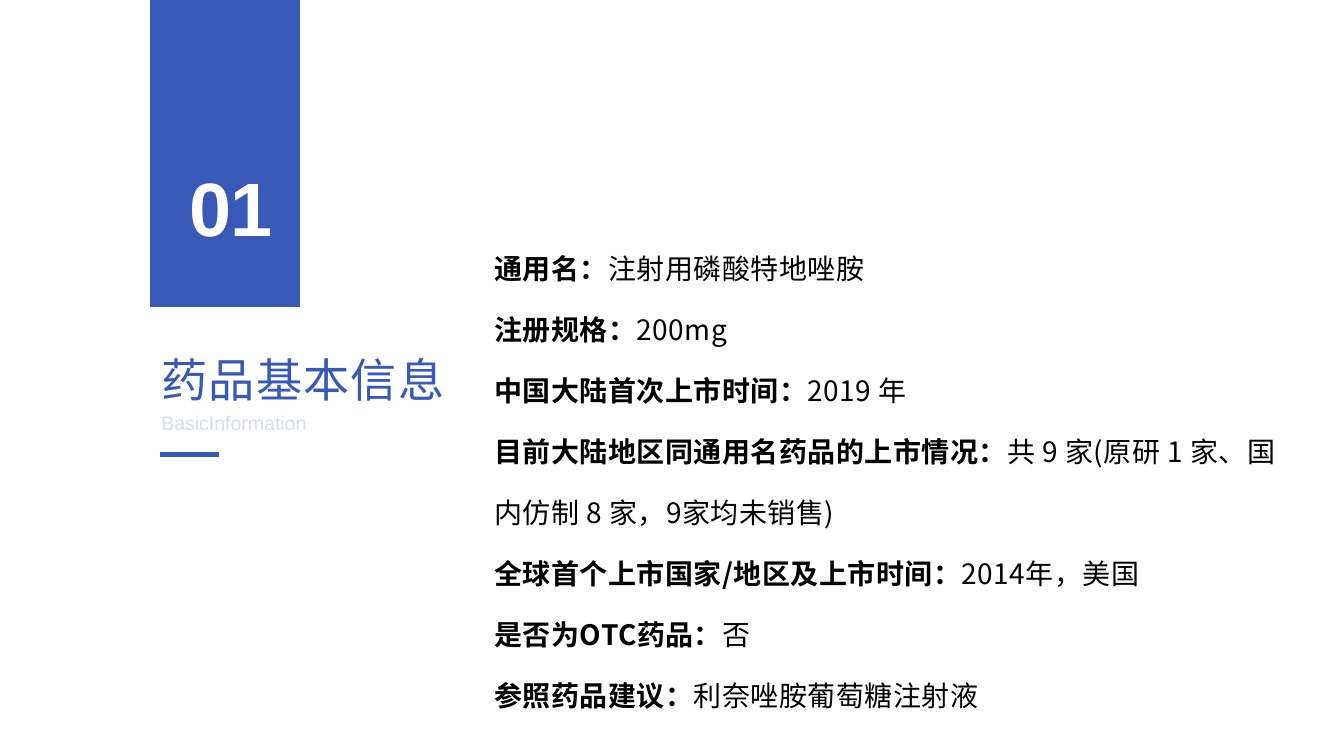
from lxml.etree import SubElement
from pptx import Presentation
from pptx.dml.color import RGBColor
from pptx.enum.shapes import MSO_CONNECTOR as Connector
from pptx.oxml.ns import qn
from pptx.util import Pt

NUMBER = "01"
TITLE = "药品基本信息"
SUBTITLE = "BasicInformation"
FACTS = [
    ("通用名：", "注射用磷酸特地唑胺"),
    ("注册规格：", "200mg"),
    ("中国大陆首次上市时间：", "2019 年"),
    ("目前大陆地区同通用名药品的上市情况：", "共 9 家(原研 1 家、国内仿制 8 家，9家均未销售)"),
    ("全球首个上市国家/地区及上市时间：", "2014年，美国"),
    ("是否为OTC药品：", "否"),
    ("参照药品建议：", "利奈唑胺葡萄糖注射液"),
]
BLUE, WHITE, PALE, BLACK = "3959B9", "FFFFFF", "D6DCE5", "000000"
LATIN, CHINESE = "Arial", "Noto Sans CJK SC"
COLUMNS = [107.3, 107.3, 115.2, 591.8]
ROWS = [219.3, 232.1, 88.6]
NO_STYLE = "{2D5ABB26-0587-4C30-8999-92F81FD0307C}"


def rgb(color):
    return RGBColor.from_string(color)


def inset(cell, left, top):
    cell.margin_left, cell.margin_top = Pt(left), Pt(top)
    cell.margin_right = cell.margin_bottom = 0


def write(paragraph, runs, size, face, color, tracking):
    """Fill a paragraph with (text, bold) runs; tracking is in points."""
    font = paragraph.font
    font.size, font.name = Pt(size), face
    font.color.rgb = rgb(color)
    for text, bold in runs:
        run = paragraph.add_run()
        run.text = text
        run.font.bold = bold
        properties = run.font._element
        properties.set("spc", str(round(tracking * 100)))
        SubElement(properties, qn("a:ea")).set("typeface", face)


def add_layout_table(slide):
    frame = slide.shapes.add_table(len(ROWS), len(COLUMNS), 0, 0,
                                   Pt(sum(COLUMNS)), Pt(sum(ROWS)))
    table = frame.table
    table.first_row = table.horz_banding = False
    table._tbl.tblPr.find(qn("a:tableStyleId")).text = NO_STYLE
    for column, width in zip(table.columns, COLUMNS):
        column.width = Pt(width)
    for row, height in zip(table.rows, ROWS):
        row.height = Pt(height)
    for cell in table.iter_cells():
        cell.fill.background()
    for row in (1, 2):
        table.cell(row, 0).merge(table.cell(row, 2))
    table.cell(0, 3).merge(table.cell(2, 3))
    return table


def main():
    deck = Presentation()
    deck.slide_width, deck.slide_height = Pt(960), Pt(540)
    slide = deck.slides.add_slide(deck.slide_layouts[6])
    table = add_layout_table(slide)

    banner = table.cell(0, 1)
    banner.fill.solid()
    banner.fill.fore_color.rgb = rgb(BLUE)
    inset(banner, 28, 120.4)
    write(banner.text_frame.paragraphs[0], [(NUMBER, True)], 54, LATIN, WHITE, -0.6)

    heading = table.cell(1, 0)
    inset(heading, 115.2, 26.4)
    lines = heading.text_frame
    write(lines.paragraphs[0], [(TITLE, False)], 33, CHINESE, BLUE, 0.9)
    subtitle = lines.add_paragraph()
    subtitle.space_before = Pt(1.4)
    write(subtitle, [(SUBTITLE, False)], 14, LATIN, PALE, -0.05)

    details = table.cell(0, 3)
    inset(details, 20.6, 162.2)
    lines = details.text_frame
    for index, (label, value) in enumerate(FACTS):
        fact = lines.add_paragraph() if index else lines.paragraphs[0]
        fact.line_spacing = 1.5
        write(fact, [(label, True), (value, False)], 20, CHINESE, BLACK, 0.3)

    underline = slide.shapes.add_connector(Connector.STRAIGHT, Pt(114.5), Pt(324.7),
                                           Pt(156.7), Pt(324.7))
    underline.line.color.rgb = rgb(BLUE)
    underline.line.width = Pt(3.5)
    SubElement(underline._element.spPr, qn("a:effectLst"))

    deck.save("out.pptx")


if __name__ == "__main__":
    main()
